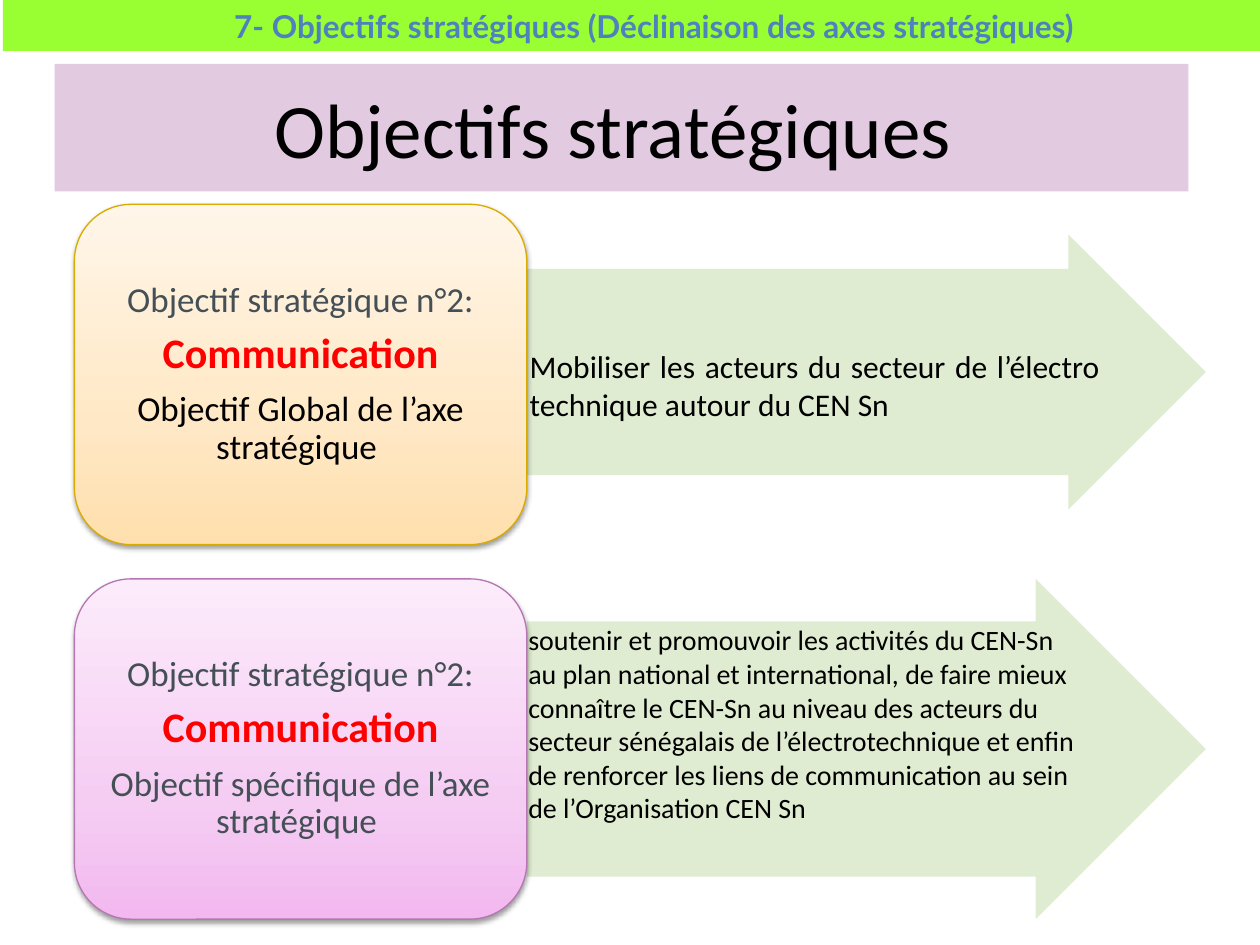
from copy import deepcopy

from lxml.etree import SubElement
from pptx import Presentation
from pptx.dml.color import RGBColor
from pptx.enum.shapes import MSO_SHAPE
from pptx.enum.text import MSO_ANCHOR, PP_ALIGN
from pptx.oxml.ns import qn
from pptx.util import Cm, Pt

BLACK = RGBColor(0x00, 0x00, 0x00)
RED = RGBColor(0xFF, 0x00, 0x00)
SLATE = RGBColor(0x44, 0x4F, 0x56)
BLUE = RGBColor(0x4F, 0x81, 0xBD)
LIME = RGBColor(0x99, 0xFF, 0x33)
LILAC = RGBColor(0xE2, 0xCA, 0xE1)
PALE_GREEN = RGBColor(0xDD, 0xEB, 0xCD)
GOLD = RGBColor(0xD9, 0xAA, 0x00)
PURPLE = RGBColor(0xB4, 0x77, 0xB1)
ORANGE_STOPS = (RGBColor(0xFF, 0xDF, 0xAD), RGBColor(0xFF, 0xE8, 0xC5), RGBColor(0xFF, 0xF6, 0xE9))
PINK_STOPS = (RGBColor(0xF2, 0xB8, 0xEF), RGBColor(0xF5, 0xCD, 0xF3), RGBColor(0xFC, 0xEB, 0xFB))

BOX_LEFT, BOX_WIDTH, BOX_HEIGHT = 1.5, 9.12, 6.86
ARROW_LEFT, ARROW_WIDTH = BOX_LEFT + BOX_WIDTH, 13.69


def write(paragraph, text, size, color=BLACK, bold=False, font="Calibri",
          align=PP_ALIGN.CENTER, line_spacing=None, space_after=None):
    paragraph.alignment = align
    paragraph.line_spacing = line_spacing
    paragraph.space_after = space_after
    run = paragraph.add_run()
    run.text = text
    run.font.name = font
    run.font.size = Pt(size)
    run.font.bold = bold
    run.font.color.rgb = color


class SlideBuilder:
    def __init__(self, slide):
        self.slide = slide

    def add_shape(self, kind, left, top, width, height, margins, anchor=MSO_ANCHOR.MIDDLE):
        """Add a lineless shape; margins are left, top, right, bottom in cm."""
        shape = self.slide.shapes.add_shape(kind, Cm(left), Cm(top), Cm(width), Cm(height))
        shape.shadow.inherit = False
        shape.line.fill.background()
        frame = shape.text_frame
        frame.word_wrap = True
        frame.vertical_anchor = anchor
        (frame.margin_left, frame.margin_top,
         frame.margin_right, frame.margin_bottom) = map(Cm, margins)
        return shape

    def add_banner(self, left, top, width, height, fill, text, indent=0, **text_format):
        shape = self.add_shape(MSO_SHAPE.RECTANGLE, left, top, width, height,
                               (0.25 + indent, 0.13, 0.25, 0.13))
        shape.fill.solid()
        shape.fill.fore_color.rgb = fill
        write(shape.text_frame.paragraphs[0], text, **text_format)

    def add_arrow(self, top, height, margins, text, **text_format):
        shape = self.add_shape(MSO_SHAPE.RIGHT_ARROW, ARROW_LEFT, top, ARROW_WIDTH, height,
                               margins, MSO_ANCHOR.TOP)
        shape.adjustments[0] = 0.75
        shape.adjustments[1] = 0.5
        shape.fill.solid()
        shape.fill.fore_color.rgb = PALE_GREEN
        color = shape.element.spPr.find(qn("a:solidFill"))[0]
        SubElement(color, qn("a:alpha"), val="90000")
        write(shape.text_frame.paragraphs[0], text, **text_format)

    def add_goal_box(self, top, stops, line_color, goal, goal_color):
        shape = self.add_shape(MSO_SHAPE.ROUNDED_RECTANGLE, BOX_LEFT, top, BOX_WIDTH,
                               BOX_HEIGHT, (0.2, 0.1, 0.2, 0.1))
        shape.line.color.rgb = line_color
        shape.line.width = Pt(0.75)
        self.fill_gradient(shape, stops)
        self.cast_shadow(shape)
        frame = shape.text_frame
        lines = (("Objectif stratégique n°2:", 20, SLATE, False),
                 ("Communication", 24, RED, True),
                 (goal, 20, goal_color, False))
        for index, (text, size, color, bold) in enumerate(lines):
            paragraph = frame.add_paragraph() if index else frame.paragraphs[0]
            write(paragraph, text, size, color, bold,
                  line_spacing=0.9, space_after=Pt(round(size * 0.35)))

    def fill_gradient(self, shape, colors):
        """Fill from bottom to top with three colours."""
        shape.fill.gradient()
        shape.fill.gradient_angle = 90
        stop_list = shape.element.spPr.find(qn("a:gradFill")).find(qn("a:gsLst"))
        stop_list.append(deepcopy(stop_list[0]))
        for stop, position, color in zip(shape.fill.gradient_stops, (0, 0.35, 1), colors):
            stop.position = position
            stop.color.rgb = color

    def cast_shadow(self, shape):
        effects = shape.element.spPr.find(qn("a:effectLst"))
        shadow = SubElement(effects, qn("a:outerShdw"), blurRad="40000", dist="20000",
                            dir="5400000", rotWithShape="0")
        color = SubElement(shadow, qn("a:srgbClr"), val="000000")
        SubElement(color, qn("a:alpha"), val="38000")


def main():
    presentation = Presentation()
    presentation.slide_width = Cm(25.4)
    presentation.slide_height = Cm(19.05)
    builder = SlideBuilder(presentation.slides.add_slide(presentation.slide_layouts[6]))

    builder.add_banner(1.1, 1.29, 22.86, 2.57, LILAC, "Objectifs stratégiques ", size=44)
    builder.add_arrow(4.73, 5.54, (0.06, 1.57, 0.06, 0.06),
                      "Mobiliser les acteurs du secteur de l’électro technique autour du CEN Sn",
                      size=18, align=PP_ALIGN.JUSTIFY)
    builder.add_goal_box(4.12, ORANGE_STOPS, GOLD,
                         "Objectif Global de l’axe stratégique ", BLACK)
    builder.add_arrow(11.67, 6.86, (0.03, 0.03, 0.03, 0.03),
                      "soutenir et promouvoir les activités du CEN-Sn au plan national et "
                      "international, de faire mieux connaître le CEN-Sn au niveau des acteurs "
                      "du secteur sénégalais de l’électrotechnique et enfin de renforcer les "
                      "liens de communication au sein de l’Organisation CEN Sn",
                      size=16, align=PP_ALIGN.LEFT)
    builder.add_goal_box(11.67, PINK_STOPS, PURPLE,
                         "Objectif spécifique de l’axe stratégique ", SLATE)
    builder.add_banner(0.06, 0, 25.4, 1.03, LIME,
                       "7- Objectifs stratégiques (Déclinaison des axes stratégiques) ",
                       indent=1, size=18, color=BLUE, bold=True, font="Lato")

    presentation.save("out.pptx")


if __name__ == "__main__":
    main()
